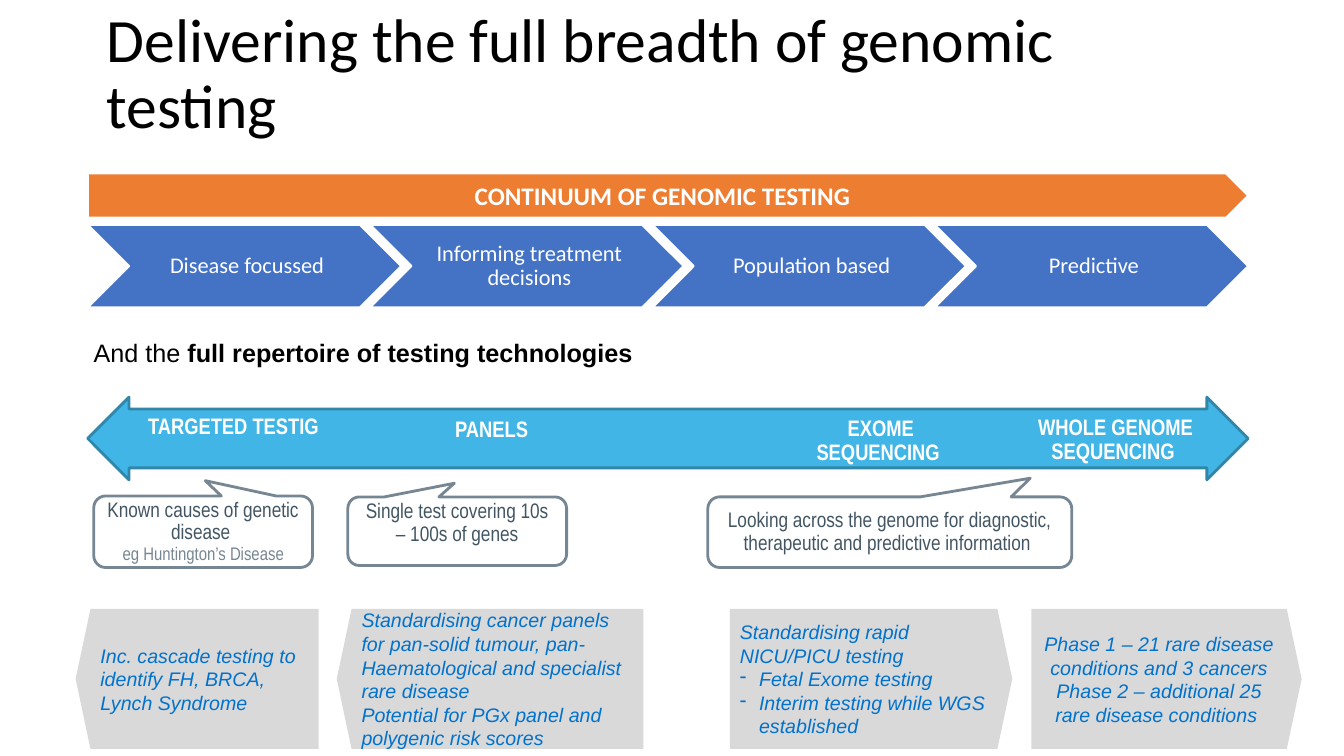
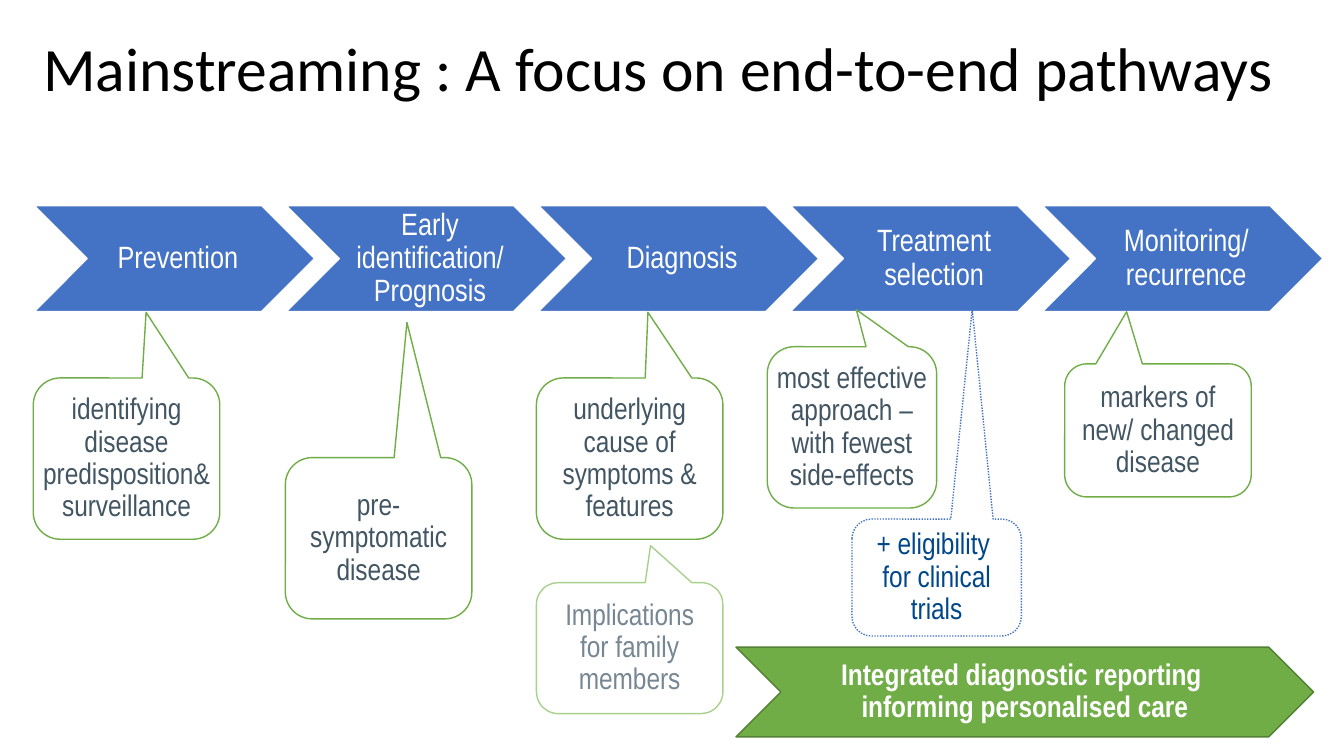
"""Build two slides on genomic testing and end-to-end pathways."""
from dataclasses import dataclass, replace
from typing import Any, NamedTuple

from pptx import Presentation
from pptx import util as u
from pptx.dml.color import RGBColor
from pptx.enum import dml, shapes, text
from pptx.oxml import parse_xml
from pptx.oxml.ns import nsdecls

PX = 9144
WHITE = RGBColor(0xFF, 0xFF, 0xFF)
BLACK = RGBColor(0, 0, 0)
BLUE = RGBColor(0x44, 0x72, 0xC4)
ORANGE = RGBColor(0xED, 0x7D, 0x31)
SKY = RGBColor(0x41, 0xB6, 0xE6)
SKY_EDGE = RGBColor(0x30, 0x87, 0xAA)
SLATE = RGBColor(0x42, 0x55, 0x63)
STEEL = RGBColor(0x76, 0x86, 0x92)
SILVER = RGBColor(0xD9, 0xD9, 0xD9)
LINK_BLUE = RGBColor(0x00, 0x72, 0xCE)
NAVY = RGBColor(0x00, 0x47, 0x8A)
GREEN = RGBColor(0x70, 0xAD, 0x47)
PALE_GREEN = RGBColor(0xA9, 0xD1, 0x8E)
DARK_GREEN = RGBColor(0x53, 0x80, 0x35)

SHAPE = shapes.MSO_SHAPE
LEFT, CENTER = text.PP_ALIGN.LEFT, text.PP_ALIGN.CENTER
TOP, MIDDLE = text.MSO_ANCHOR.TOP, text.MSO_ANCHOR.MIDDLE
SIDES = ("margin_left", "margin_top", "margin_right", "margin_bottom")


class Box(NamedTuple):
    """Left, top, width and height in px."""
    x: int
    y: int
    w: int
    h: int


class Run(NamedTuple):
    """Text with font values that differ from its style."""
    text: str
    fmt: dict[str, Any] = {}
    color: RGBColor | None = None


class Para(NamedTuple):
    """A paragraph of runs, with or without a dash."""
    runs: tuple[Run, ...]
    dash: bool = False


@dataclass(frozen=True)
class Style:
    """Font, paragraph and frame values of a text."""
    font: str
    size: float
    color: RGBColor
    bold: bool = False
    italic: bool = False
    align: text.PP_ALIGN = CENTER
    spacing: float = 0.9
    anchor: text.MSO_ANCHOR = MIDDLE
    inset: tuple[int, int, int, int] = (10, 5, 10, 5)


@dataclass(frozen=True)
class Look:
    """Preset, fill and outline of a shape."""
    preset: SHAPE
    fill: RGBColor
    line: RGBColor | None = None
    width: float = 1
    dash: dml.MSO_LINE | None = None
    adj: tuple[float, ...] = ()


TITLE = Style("Calibri", 44, BLACK, align=LEFT)
SUBTITLE = Style("Arial", 18, BLACK, align=LEFT, spacing=1, anchor=TOP)
BANNER = Style("Calibri", 18, WHITE, bold=True, spacing=1)
STAGE = Style("Calibri", 16, WHITE, inset=(7, 2, 2, 2))
TECH = Style("Arial Narrow", 16, WHITE, bold=True)
NOTE = Style("Arial Narrow", 15, SLATE)
DETAIL = Style("Arial", 14, LINK_BLUE, italic=True, align=LEFT, spacing=1)
STEP = Style("Arial Narrow", 22, WHITE, inset=(10, 3, 3, 3))
BUBBLE = Style("Arial Narrow", 21.3, SLATE, inset=(0, 5, 0, 5))
REPORT = Style("Arial Narrow", 21.3, WHITE, bold=True)

CHEVRON = Look(SHAPE.CHEVRON, BLUE, WHITE, 1.5)
CALLOUT = Look(SHAPE.ROUNDED_RECTANGULAR_CALLOUT, WHITE, STEEL, 2)
GREEN_CALLOUT = replace(CALLOUT, line=GREEN, width=1)
TAG_LEFT = Look(SHAPE.LEFT_ARROW, SILVER, adj=(1, 0.106))
TAG_RIGHT = replace(TAG_LEFT, preset=SHAPE.RIGHT_ARROW)


def pointing(look: Look, x: float, y: float) -> Look:
    """Return a callout look with its tip at the given offset."""
    return replace(look, adj=(x, y, 0.167))


def lines(*texts: str) -> list[Para]:
    """Make one plain paragraph of each text."""
    return [Para((Run(t),)) for t in texts]


def write(s: Any, paras: list[Para], style: Style) -> None:
    """Put styled paragraphs in a shape."""
    tf = s.text_frame
    frame = {"word_wrap": True, "vertical_anchor": style.anchor}
    frame |= {side: v * PX for side, v in zip(SIDES, style.inset)}
    for name, value in frame.items():
        setattr(tf, name, value)
    for i, para in enumerate(paras):
        p = tf.add_paragraph() if i else tf.paragraphs[0]
        p.alignment, p.line_spacing = style.align, style.spacing
        if para.dash:
            pr = p._p.get_or_add_pPr()
            pr.set("marL", str(19 * PX))
            pr.set("indent", str(-19 * PX))
            pr.append(parse_xml(f'<a:buChar {nsdecls("a")} char="-"/>'))
        for run in para.runs:
            for j, part in enumerate(run.text.split("\n")):
                if j:
                    p.add_line_break()
                r = p.add_run()
                r.text = part
                fmt = {"name": style.font, "size": u.Pt(style.size),
                       "bold": style.bold, "italic": style.italic}
                for name, value in (fmt | run.fmt).items():
                    setattr(r.font, name, value)
                r.font.color.rgb = run.color or style.color


def add_text(slide: Any, box: Box, paras: list[Para], style: Style) -> None:
    """Add a text box."""
    write(slide.shapes.add_textbox(*(v * PX for v in box)), paras, style)


def add_shape(slide: Any, box: Box, look: Look, paras: list[Para], style: Style) -> None:
    """Add a preset shape with its text."""
    s = slide.shapes.add_shape(look.preset, *(v * PX for v in box))
    s.shadow.inherit = False
    for i, value in enumerate(look.adj):
        s.adjustments[i] = value
    s.fill.solid()
    s.fill.fore_color.rgb = look.fill
    if look.line is None:
        s.line.fill.background()
    else:
        s.line.color.rgb = look.line
        s.line.width = u.Pt(look.width)
        if look.dash:
            s.line.dash_style = look.dash
    if paras:
        write(s, paras, style)


def add_chevrons(slide: Any, first: Box, pitch: int, labels: list[str],
                 look: Look, style: Style) -> None:
    """Add a row of evenly spaced chevrons."""
    for i, label in enumerate(labels):
        add_shape(slide, first._replace(x=first.x + i * pitch), look, lines(label), style)


def build_breadth(slide: Any) -> None:
    """Draw the slide on the breadth of testing."""
    add_text(slide, Box(96, 0, 1141, 150),
             lines("Delivering the full breadth of genomic testing"), TITLE)
    add_shape(slide, Box(87, 172, 1151, 44), Look(SHAPE.PENTAGON, ORANGE, WHITE, 1.5),
              lines("CONTINUUM OF GENOMIC TESTING"), BANNER)
    add_chevrons(slide, Box(87, 223, 311, 82), 280,
                 ["Disease focussed", "Informing treatment decisions",
                  "Population based", "Predictive"], CHEVRON, STAGE)
    add_text(slide, Box(83, 330, 1105, 55),
             [Para((Run("And the "),
                    Run("full repertoire of testing technologies", {"bold": True})))], SUBTITLE)

    add_shape(slide, Box(87, 394, 1151, 82),
              Look(SHAPE.LEFT_RIGHT_ARROW, SKY, SKY_EDGE, 2, adj=(0.711, 0.5)), [], TECH)
    top_left = replace(TECH, align=LEFT, anchor=TOP)
    for box, label, style in (
        (Box(137, 407, 201, 59), "TARGETED TESTIG", top_left),
        (Box(417, 410, 141, 52), "PANELS", replace(TECH, anchor=TOP)),
        (Box(771, 412, 205, 52), "EXOME SEQUENCING ", TECH),
        (Box(1000, 411, 213, 52), "WHOLE GENOME SEQUENCING ", TECH),
    ):
        add_text(slide, box, lines(label), style)

    example = Run("eg Huntington’s Disease", {"size": u.Pt(13)}, STEEL)
    for box, tip, paras, style in (
        (Box(93, 492, 217, 71), (0.01, -0.714),
         lines("Known causes of genetic disease ") + [Para((example,))], NOTE),
        (Box(345, 493, 217, 68), (-0.013, -0.7),
         lines("Single test covering 10s – 100s of genes"),
         replace(NOTE, anchor=TOP, inset=(10, 0, 10, 0))),
        (Box(702, 493, 361, 70), (0.386, -0.765),
         lines("Looking across the genome for diagnostic, "
               "therapeutic and predictive information "), NOTE),
    ):
        add_shape(slide, box, pointing(CALLOUT, *tip), paras, style)

    rapid = lines("Standardising rapid NICU/PICU testing") + [
        p._replace(dash=True)
        for p in lines("Fetal Exome testing", "Interim testing while WGS established")]
    for x, w, look, paras, style in (
        (75, 241, TAG_LEFT,
         lines("Inc. cascade testing to identify FH, BRCA, Lynch Syndrome"), DETAIL),
        (334, 304, TAG_LEFT,
         lines("Standardising cancer panels for pan-solid tumour, "
               "pan-Haematological and specialist rare disease",
               "Potential for PGx panel and polygenic risk scores"), DETAIL),
        (724, 280, TAG_RIGHT, rapid, DETAIL),
        (1023, 268, TAG_RIGHT,
         lines("Phase 1 – 21 rare disease conditions and 3 cancers",
               "Phase 2 – additional 25 rare disease conditions "),
         replace(DETAIL, align=CENTER)),
    ):
        add_shape(slide, Box(x, 604, w, 139), look, paras, style)


def build_pathways(slide: Any) -> None:
    """Draw the slide on end-to-end pathways."""
    add_text(slide, Box(33, 35, 1269, 73),
             lines("Mainstreaming : A focus on end-to-end pathways"), TITLE)
    add_chevrons(slide, Box(34, 204, 278, 105), 250,
                 ["Prevention", "Early identification/ Prognosis", "Diagnosis",
                  "Treatment selection", "Monitoring/ recurrence"],
                 replace(CHEVRON, width=1), STEP)
    dotted = replace(GREEN_CALLOUT, line=BLUE, dash=dml.MSO_LINE.ROUND_DOT)
    pale = replace(GREEN_CALLOUT, line=PALE_GREEN)
    for box, look, tip, paras, color in (
        (Box(33, 375, 185, 160), GREEN_CALLOUT, (0.105, -0.907),
         lines("identifying disease predisposition& surveillance"), SLATE),
        (Box(283, 454, 185, 160), GREEN_CALLOUT, (0.152, -1.338),
         lines("pre-symptomatic disease"), SLATE),
        (Box(532, 375, 185, 160), GREEN_CALLOUT, (0.098, -0.907),
         lines("underlying cause of symptoms & features"), SLATE),
        (Box(761, 344, 168, 160), GREEN_CALLOUT, (0.026, -0.73),
         lines("most effective approach – with fewest side-effects"), SLATE),
        (Box(1056, 361, 185, 132), GREEN_CALLOUT, (-0.168, -0.892),
         lines("markers of new/ changed disease"), SLATE),
        (Box(845, 515, 168, 116), dotted, (0.21, -2.295),
         lines("+ eligibility \nfor clinical trials"), NAVY),
        (Box(532, 578, 185, 130), pale, (0.112, -0.782),
         lines("Implications", "for family members"), STEEL),
    ):
        add_shape(slide, box, pointing(look, *tip), paras, replace(BUBBLE, color=color))
    add_shape(slide, Box(730, 642, 573, 89), Look(SHAPE.CHEVRON, GREEN, DARK_GREEN),
              lines("Integrated diagnostic reporting \ninforming personalised care"), REPORT)


def main() -> None:
    """Build and save the presentation."""
    prs = Presentation()
    prs.slide_width, prs.slide_height = 1333 * PX, 750 * PX
    for build in (build_breadth, build_pathways):
        build(prs.slides.add_slide(prs.slide_layouts[6]))
    prs.save("out.pptx")


if __name__ == "__main__":
    main()
